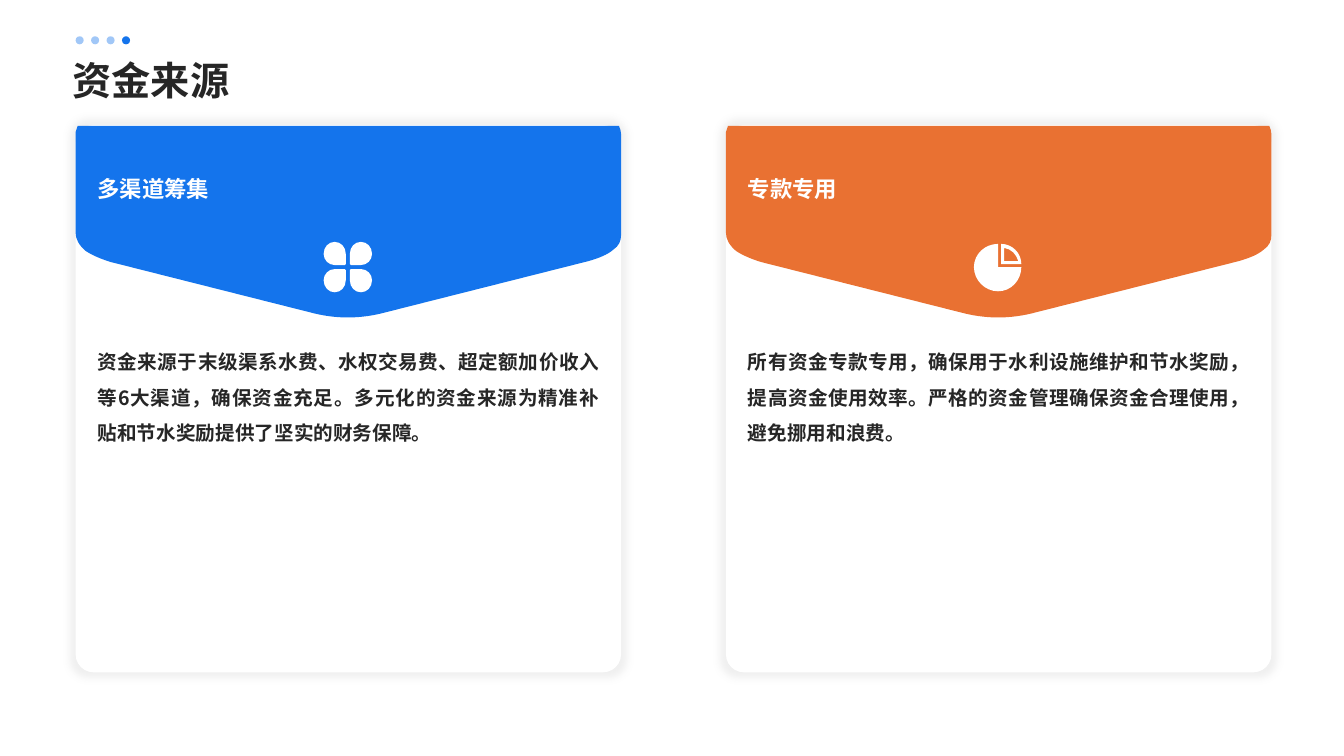
from lxml import etree
from pptx import Presentation
from pptx import util as u
from pptx.dml.color import RGBColor
from pptx.enum import shapes, text
from pptx.oxml.ns import qn

FONT = "Noto Sans CJK SC"
BLUE, ORANGE, WHITE, INK = "1474EC", "E97132", "FFFFFF", "262626"


def paint(shape, color, alpha=100):
    shape.shadow.inherit = False
    shape.fill.solid()
    shape.fill.fore_color.rgb = RGBColor.from_string(color)
    shape.line.fill.background()
    if alpha < 100:
        tone = shape.fill._xPr.find(".//" + qn("a:srgbClr"))
        etree.SubElement(tone, qn("a:alpha"), val=str(alpha * 1000))


def write(words, x, y, w, h, size, color=INK, space=1.0, mid=False,
          inset=True, wrap=True):
    box = slide.shapes.add_textbox(*map(u.Inches, (x, y, w, h)))
    frame = box.text_frame
    frame.word_wrap = wrap
    if mid:
        frame.vertical_anchor = text.MSO_ANCHOR.MIDDLE
    if not inset:
        frame.margin_left = frame.margin_right = 0
        frame.margin_top = frame.margin_bottom = 0
    para = frame.paragraphs[0]
    para.alignment = text.PP_ALIGN.JUSTIFY
    para.line_spacing = space
    run = para.add_run()
    run.text = words
    run.font.size = u.Pt(size)
    run.font.bold = True
    run.font.name = FONT
    run.font.color.rgb = RGBColor.from_string(color)
    etree.SubElement(run.font._element, qn("a:ea"), typeface=FONT)


deck = Presentation()
deck.slide_width, deck.slide_height = u.Inches(13.33), u.Inches(7.5)
slide = deck.slides.add_slide(deck.slide_layouts[6])

# Outlines: two numbers make a line, six make a curve
banner = [[
    (0.02, 0), (5.39, 0), (5.4, 0.03, 5.41, 0.05, 5.41, 0.08), (5.41, 1.08),
    (5.41, 1.14, 5.39, 1.19, 5.33, 1.23), (5.27, 1.28, 5.19, 1.31, 5.09, 1.34),
    (3.07, 1.85), (2.96, 1.88, 2.83, 1.9, 2.7, 1.9),
    (2.57, 1.9, 2.44, 1.88, 2.33, 1.85), (0.35, 1.35),
    (0.25, 1.35 - 0.03, 0.16, 1.28, 0.1, 1.24), (0.03, 1.18, 0, 1.12, 0, 1.06),
    (0, 0.06),
]]

# Icons are set around their own centre
petal = [
    (0.03, 0.02), (0.13, 0.02), (0.19, 0.02, 0.24, 0.07, 0.24, 0.13),
    (0.24, 0.2, 0.19, 0.25, 0.13, 0.25), (0.07, 0.25, 0.02, 0.2, 0.02, 0.13),
    (0.02, 0.03), (0.02, 0.02, 0.02, 0.02, 0.03, 0.02),
]
flower = [
    [tuple(n * (sx, sy)[i % 2] for i, n in enumerate(step)) for step in petal]
    for sx in (-1, 1) for sy in (-1, 1)
]
pie = [
    [(0, -0.23), (0, 0), (0.23, 0), (0.23, 0.13, 0.13, 0.24, 0, 0.24),
     (-0.13, 0.24, -0.24, 0.13, -0.24, 0),
     (-0.24, -0.13, -0.13, -0.23, 0, -0.23)],
    [(0.03, -0.23), (0.14, -0.23, 0.23, -0.14, 0.23, -0.03), (0.03, -0.03)],
    [(0.06, -0.19), (0.06, -0.06), (0.2, -0.06),
     (0.18, -0.13, 0.13, -0.18, 0.06, -0.19)],
]

cards = [
    (0.75, BLUE, flower, "多渠道筹集",
     "资金来源于末级渠系水费、水权交易费、超定额加价收入等6大渠道，确保资金充足。"
     "多元化的资金来源为精准补贴和节水奖励提供了坚实的财务保障。"),
    (7.2, ORANGE, pie, "专款专用",
     "所有资金专款专用，确保用于水利设施维护和节水奖励，提高资金使用效率。"
     "严格的资金管理确保资金合理使用，避免挪用和浪费。"),
]

for left, color, icon, head, body in cards:
    # White card with a soft shadow
    card = slide.shapes.add_shape(
        shapes.MSO_SHAPE.ROUNDED_RECTANGLE,
        *map(u.Inches, (left, 1.24, 5.41, 5.43)))
    card.adjustments[0] = 0.033
    paint(card, WHITE)
    glow = etree.SubElement(
        card._element.spPr.find(qn("a:effectLst")), qn("a:outerShdw"),
        blurRad=str(u.Pt(5)), sx="102000", sy="102000",
        algn="ctr", rotWithShape="0")
    tone = etree.SubElement(glow, qn("a:srgbClr"), val="D9D9D9")
    etree.SubElement(tone, qn("a:alpha"), val="40000")

    # Banner and icon
    for loops, fill, dx, dy in ((banner, color, left, 1.25),
                                (icon, WHITE, left + 2.7, 2.65)):
        pen = None
        for steps in loops:
            ends = [(u.Inches(s[-2] + dx), u.Inches(s[-1] + dy)) for s in steps]
            if pen is None:
                pen = slide.shapes.build_freeform(*ends[0])
            else:
                pen.move_to(*ends[0])
            pen.add_line_segments(ends[1:], close=True)
        form = pen.convert_to_shape()
        paint(form, fill)

        # Bend the six-number steps into curves
        lines = list(form._element.iter(qn("a:lnTo")))
        flat = [step for steps in loops for step in steps[1:]]
        for line, step in zip(lines, flat):
            if len(step) == 6:
                line.tag = qn("a:cubicBezTo")
                for i in (0, 2):
                    spot = etree.Element(
                        qn("a:pt"),
                        x=str(u.Inches(step[i] + dx) - form.left),
                        y=str(u.Inches(step[i + 1] + dy) - form.top))
                    line.insert(i // 2, spot)

    # Heading and body
    write(head, left + 0.12, 1.29, 5.17, 1.1, 16, color=WHITE, space=1.2,
          mid=True, wrap=False)
    write(body, left + 0.12, 3.31, 5.17, 3.17, 14, space=1.5)

# Title
write("资金来源", 0.72, 0.51, 11.88, 0.51, 28, space=1.1, mid=True, inset=False)

# Row of dots, the last one solid
group = slide.shapes.add_group_shape()
for i in range(4):
    dot = group.shapes.add_shape(
        shapes.MSO_SHAPE.OVAL,
        *map(u.Inches, (0.75 + i * 0.46 / 3, 0.36, 0.08, 0.08)))
    paint(dot, BLUE, alpha=100 if i == 3 else 40)

deck.save("out.pptx")
